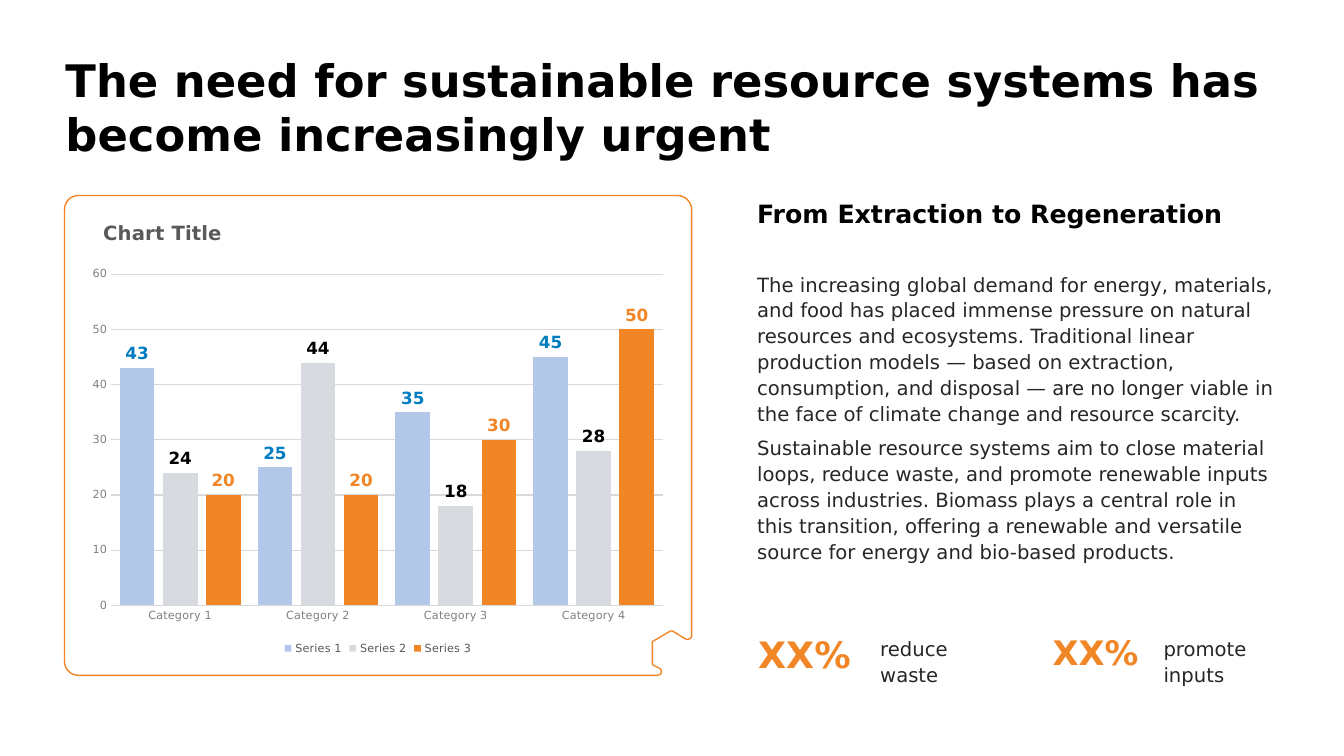
from dataclasses import dataclass

from pptx import Presentation
from pptx.chart.data import CategoryChartData
from pptx.dml.color import RGBColor as Color
from pptx.enum.chart import XL_CHART_TYPE as ChartType
from pptx.enum.chart import XL_LABEL_POSITION as LabelPosition
from pptx.enum.chart import XL_LEGEND_POSITION as LegendPosition
from pptx.enum.chart import XL_TICK_MARK as TickMark
from pptx.oxml import parse_xml
from pptx.oxml.ns import nsdecls, qn
from pptx.util import Emu, Pt

PX = 9144  # one px is a hundredth of an inch


@dataclass(frozen=True)
class Theme:
    font: str = "DejaVu Sans"
    black: str = "000000"
    body: str = "262626"
    legend: str = "595959"
    axis: str = "808080"
    grid: str = "D9D9D9"
    orange: str = "F18626"
    blue: str = "007DC2"
    pale_blue: str = "B3C7E8"
    pale_grey: str = "D7DBE0"
    title_size: float = 32
    heading_size: float = 18
    body_size: float = 14
    label_size: float = 12
    axis_size: float = 8


THEME = Theme()

# Card outline: two numbers make a line, six make a curve
CARD_START = (78, 194)
CARD_STEPS = [
    (672, 194), (679, 194, 686, 200, 686, 208),
    (686, 631), (686, 633, 683, 635, 680, 634),
    (667, 626), (667, 626, 666, 626, 665, 626),
    (648, 636), (647, 637, 647, 637, 647, 638),
    (647, 658), (647, 658, 647, 659, 648, 660),
    (654, 663), (657, 665, 656, 668, 655, 669),
    (652, 670), (78, 670), (70, 670, 64, 664, 64, 656),
    (64, 208), (64, 200, 70, 194, 78, 194),
]

CATEGORIES = ["Category 1", "Category 2", "Category 3", "Category 4"]
SERIES = [  # name, values, bar colour, label colour
    ("Series 1", (43, 25, 35, 45), THEME.pale_blue, THEME.blue),
    ("Series 2", (24, 44, 18, 28), THEME.pale_grey, THEME.black),
    ("Series 3", (20, 20, 30, 50), THEME.orange, THEME.orange),
]

BODY = [
    "The increasing global demand for energy, materials, and food has placed "
    "immense pressure on natural resources and ecosystems. Traditional linear "
    "production models — based on extraction, consumption, and disposal — are "
    "no longer viable in the face of climate change and resource scarcity.",
    "Sustainable resource systems aim to close material loops, reduce waste, "
    "and promote renewable inputs across industries. Biomass plays a central "
    "role in this transition, offering a renewable and versatile source for "
    "energy and bio-based products.",
]


def emu(*lengths):
    return [Emu(round(length * PX)) for length in lengths]


def style_font(font, size, color, bold=False):
    font.name = THEME.font
    font.size = Pt(size)
    font.bold = bold
    font.color.rgb = Color.from_string(color)


def add_text(page, place, paragraphs, size, color, bold=False, spacing=1.1, after=0):
    box = page.shapes.add_textbox(*emu(*place))
    frame = box.text_frame
    frame.word_wrap = True
    frame.margin_left = frame.margin_top = frame.margin_right = frame.margin_bottom = 0
    for index, text in enumerate(paragraphs):
        para = frame.add_paragraph() if index else frame.paragraphs[0]
        para.text = text
        para.line_spacing = spacing
        para.space_after = Pt(after)
        for span in para.runs:
            style_font(span.font, size, color, bold)


def curve_points(start, curve, count=8):
    """Points along a cubic curve, without its start."""
    nodes = [start, curve[:2], curve[2:4], curve[4:]]
    points = []
    for step in range(1, count + 1):
        t = step / count
        weights = ((1 - t) ** 3, 3 * t * (1 - t) ** 2, 3 * t * t * (1 - t), t ** 3)
        points.append(tuple(sum(w * node[axis] for w, node in zip(weights, nodes))
                            for axis in (0, 1)))
    return points


def add_card(page):
    points = [CARD_START]
    for step in CARD_STEPS:
        points += [step] if len(step) == 2 else curve_points(points[-1], step)
    builder = page.shapes.build_freeform(*emu(*CARD_START))
    builder.add_line_segments([emu(*point) for point in points[1:]], close=True)
    card = builder.convert_to_shape()
    card.shadow.inherit = False
    card.fill.background()
    card.line.color.rgb = Color.from_string(THEME.orange)
    card.line.width = Pt(1)


def set_layout(parent, target="", **fractions):
    """Place a chart part by fractions of the chart's size."""
    old = parent.find(qn("c:layout"))
    position = 0
    if old is not None:
        position = parent.index(old)
        parent.remove(old)
    inner = f'<c:layoutTarget val="{target}"/>' if target else ""
    modes = '<c:xMode val="edge"/><c:yMode val="edge"/>'
    sizes = "".join(f'<c:{key} val="{value}"/>' for key, value in fractions.items())
    parent.insert(position, parse_xml(
        f'<c:layout {nsdecls("c")}><c:manualLayout>{inner}{modes}{sizes}'
        "</c:manualLayout></c:layout>"))


def style_axis(axis):
    axis.major_tick_mark = axis.minor_tick_mark = TickMark.NONE
    style_font(axis.tick_labels.font, THEME.axis_size, THEME.axis)


def style_line(line):
    line.color.rgb = Color.from_string(THEME.grid)
    line.width = Pt(0.75)


def add_column_chart(page, place):
    data = CategoryChartData(number_format="0")
    data.categories = CATEGORIES
    for name, values, *_ in SERIES:
        data.add_series(name, values)
    chart = page.shapes.add_chart(ChartType.COLUMN_CLUSTERED, *emu(*place), data).chart
    style_font(chart.font, 10, THEME.black)

    # Title and legend
    chart.has_title = True
    para = chart.chart_title.text_frame.paragraphs[0]
    para.text = "Chart Title"
    style_font(para.runs[0].font, THEME.body_size, THEME.legend, bold=True)
    set_layout(chart.chart_title.element, x=0.03, y=0.01)
    chart.has_legend = True
    chart.legend.position = LegendPosition.BOTTOM
    chart.legend.include_in_layout = False
    style_font(chart.legend.font, THEME.axis_size, THEME.legend)

    # Axes
    style_axis(chart.category_axis)
    style_line(chart.category_axis.format.line)
    values_axis = chart.value_axis
    style_axis(values_axis)
    values_axis.minimum_scale, values_axis.maximum_scale = 0, 60
    values_axis.major_unit = 10
    values_axis.format.line.fill.background()
    style_line(values_axis.major_gridlines.format.line)

    # Bars and their labels
    plot = chart.plots[0]
    plot.vary_by_categories = False
    plot.gap_width, plot.overlap = 49, -24
    for series, (_, _, bar_color, label_color) in zip(plot.series, SERIES):
        series.format.fill.solid()
        series.format.fill.fore_color.rgb = Color.from_string(bar_color)
        labels = series.data_labels
        labels.show_value = True
        labels.position = LabelPosition.OUTSIDE_END
        style_font(labels.font, THEME.label_size, label_color, bold=True)
    set_layout(chart.element.find(".//" + qn("c:plotArea")), "inner",
               x=0.05, y=0.14, w=0.93, h=0.74)


def main():
    deck = Presentation()
    deck.slide_width, deck.slide_height = emu(1333, 750)
    page = deck.slides.add_slide(deck.slide_layouts[6])

    # Chart card and title
    add_card(page)
    add_text(page, (65, 52, 1203, 78),
             ["The need for sustainable resource systems has become increasingly urgent"],
             THEME.title_size, THEME.black, bold=True, spacing=1.0)
    add_column_chart(page, (81, 210, 588, 444))

    # Right column
    add_text(page, (751, 194, 516, 54), ["From Extraction to Regeneration"],
             THEME.heading_size, THEME.black, bold=True, after=8)
    add_text(page, (751, 268, 517, 332), BODY, THEME.body_size, THEME.body, after=6)

    # Key figures
    for figure_left, size, label_left, label_width, label in (
            (752, 26, 873, 151, "reduce\vwaste"),
            (1044, 24.1, 1154, 114, "promote inputs")):
        add_text(page, (figure_left, 623, 103, 40), ["XX%"], size, THEME.orange, bold=True)
        add_text(page, (label_left, 630, label_width, 40), [label],
                 THEME.body_size, THEME.body)

    deck.save("out.pptx")


if __name__ == "__main__":
    main()
